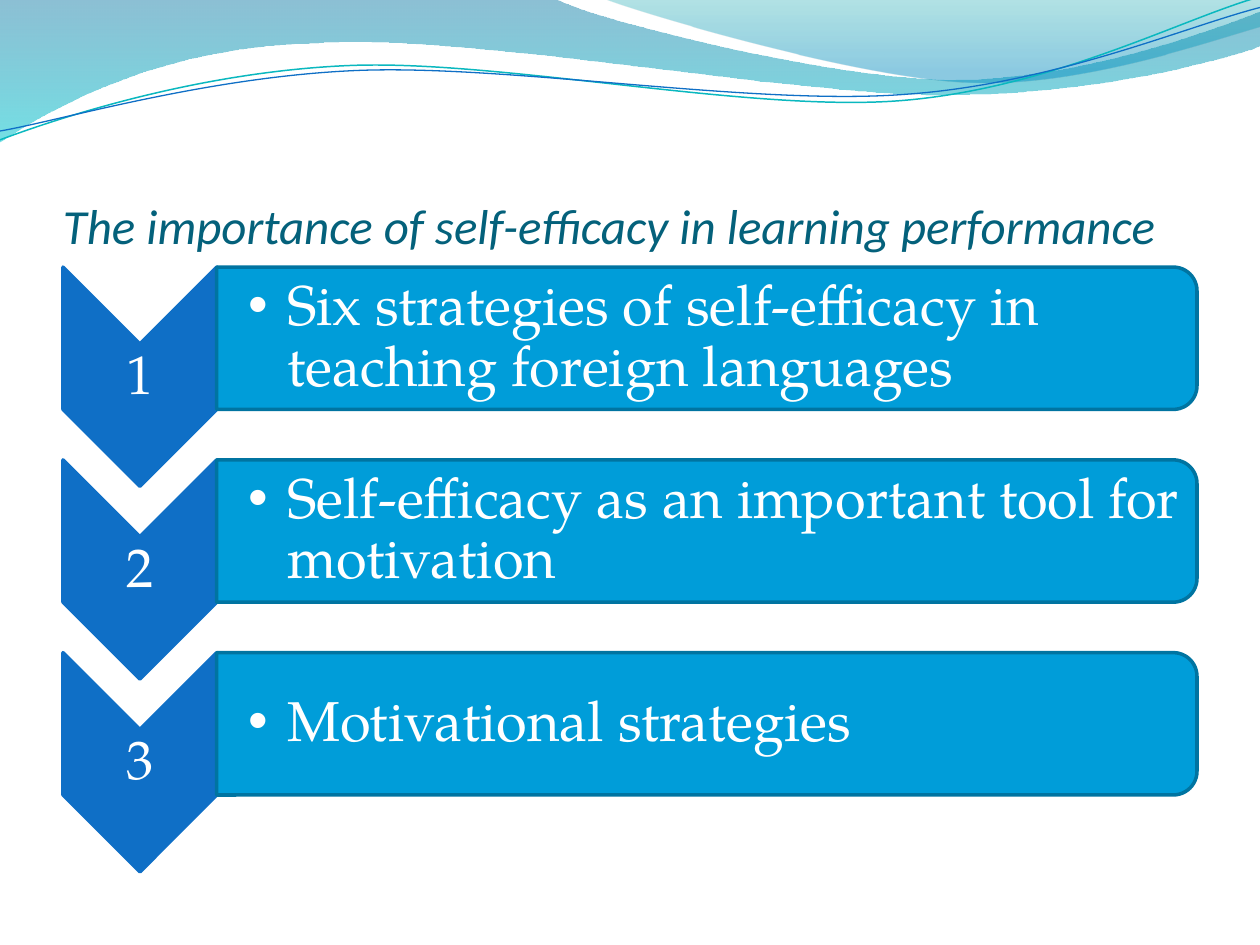
from math import cos, radians, sin

from lxml import etree
from pptx import Presentation
from pptx.dml.color import RGBColor
from pptx.enum.shapes import MSO_SHAPE
from pptx.enum.text import MSO_ANCHOR, PP_ALIGN
from pptx.oxml.ns import qn
from pptx.util import Inches, Pt

CHEVRON, ROUND_TOP = MSO_SHAPE.CHEVRON, MSO_SHAPE.ROUND_2_SAME_RECTANGLE
MIDDLE, BOTTOM = MSO_ANCHOR.MIDDLE, MSO_ANCHOR.BOTTOM
LEFT, CENTER = PP_ALIGN.LEFT, PP_ALIGN.CENTER

COLORS = {"title": "04617B", "chevron": "0F6FC6", "bar": "009DD9",
          "bar_line": "0074A1", "teal": "0AB8BF", "white": "FFFFFF"}
SERIF = "TeX Gyre Pagella"

TITLE = "The importance of self-efficacy in learning performance"
STEPS = ["Six strategies of self-efficacy in teaching foreign languages",
         "Self-efficacy as an important tool for motivation",
         "Motivational strategies"]

# Waves: 2 numbers make a straight segment, 6 a Bezier curve.
# Gradient stops: position %, colour, opacity %
BANDS = [
    ([(0, 0), (4.4, -0.01), (4.76, 0.17, 6.64, 0.63, 7.58, 0.63),
      (8.53, 0.63, 9.58, 0.26, 10, 0.09), (10.01, 0.36),
      (9.83, 0.44, 8.7, 0.76, 7.46, 0.75), (6.22, 0.75, 3.82, 0.28, 2.57, 0.34),
      (1.29, 0.36, 0.46, 0.83, -0.01, 1.13)],
     [(0, "0074A1", 45), (100, "00C6CF", 55)]),
    ([(4.79, -0.01), (5.09, 0.11, 6.82, 0.62, 7.69, 0.65),
      (8.56, 0.69, 9.61, 0.32, 10, 0.21), (10, 0)],
     [(0, "00A1A9", 30), (80, "008BBF", 45)]),
]
# Thin curves: segments, centre, colour, width
TILT = -2.7
CURVES = [
    ([(0, 1.11), (0.48, 0.93, 1.58, 0.57, 2.77, 0.52),
      (3.95, 0.47, 5.93, 0.89, 7.13, 0.8), (8.33, 0.71, 9.38, 0.15, 9.98, -0.02)],
     (4.99, 0.58), "teal", 0.85),
    ([(0, 1.04), (0.47, 0.96, 1.64, 0.61, 2.83, 0.56),
      (4.03, 0.51, 5.97, 0.84, 7.17, 0.75), (8.36, 0.67, 9.41, 0.21, 10, 0.06)],
     (5, 0.59), "chevron", 0.75),
]

# Step layout, in inches
LEFT_EDGE, TOP, PITCH = 0.5, 2.12, 1.53
CHEVRON_W, CHEVRON_H = 1.22, 1.74
BAR_W, BAR_H = 7.78, 1.13
BAR_X = LEFT_EDGE + CHEVRON_W


def rgb(name):
    return RGBColor.from_string(COLORS[name])


def pairs(seg):
    return list(zip(seg[::2], seg[1::2]))


def turn(seg, center, degrees):
    """Segment turned clockwise about the centre."""
    (cx, cy), a = center, radians(degrees)
    return tuple(v for x, y in pairs(seg) for v in (
        cx + (x - cx) * cos(a) - (y - cy) * sin(a),
        cy + (x - cx) * sin(a) + (y - cy) * cos(a)))


def add_wave(slide, segments, close):
    start, *rest = [(Inches(x), Inches(y)) for seg in segments for x, y in pairs(seg)]
    builder = slide.shapes.build_freeform(*start)
    builder.add_line_segments(rest, close=close)
    sp = builder.convert_to_shape()
    # Join each three points of a curve into one Bezier segment
    lines = iter(list(sp._element.iter(qn("a:lnTo"))))
    for seg in segments[1:]:
        first = next(lines)
        if len(seg) == 6:
            first.tag = qn("a:cubicBezTo")
            for extra in (next(lines), next(lines)):
                first.append(extra[0])
                extra.getparent().remove(extra)
    sp.shadow.inherit = False
    sp.fill.background()
    sp.line.fill.background()
    return sp


def set_gradient(sp, stops):
    """Vertical gradient with opacity."""
    old = sp._element.spPr.find(qn("a:noFill"))
    grad = etree.Element(qn("a:gradFill"), rotWithShape="1")
    stop_list = etree.SubElement(grad, qn("a:gsLst"))
    for pos, color, opacity in stops:
        gs = etree.SubElement(stop_list, qn("a:gs"), pos=str(pos * 1000))
        clr = etree.SubElement(gs, qn("a:srgbClr"), val=color)
        etree.SubElement(clr, qn("a:alpha"), val=str(opacity * 1000))
    etree.SubElement(grad, qn("a:lin"), ang="5400000", scaled="0")
    old.getparent().replace(old, grad)


def add_turned(slide, kind, x, y, w, h, fill, line):
    """Preset shape turned 90 degrees that fills the box x, y, w, h."""
    sp = slide.shapes.add_shape(kind, Inches(x + (w - h) / 2), Inches(y + (h - w) / 2),
                                Inches(h), Inches(w))
    sp.rotation = 90
    sp.shadow.inherit = False
    sp.fill.solid()
    sp.fill.fore_color.rgb = rgb(fill)
    sp.line.color.rgb = rgb(line)
    sp.line.width = Pt(2)


def add_text(slide, text, box, insets, size, font, color, anchor, align=LEFT, spacing=1.0):
    tf = slide.shapes.add_textbox(*map(Inches, box)).text_frame
    tf.word_wrap = True
    tf.vertical_anchor = anchor
    tf.margin_left, tf.margin_top, tf.margin_right, tf.margin_bottom = map(Inches, insets)
    p = tf.paragraphs[0]
    p.text = text
    p.alignment = align
    p.line_spacing = spacing
    f = p.runs[0].font
    f.size, f.name, f.color.rgb = Pt(size), font, rgb(color)
    return p


def add_bullet(p, indent):
    p.level = 1
    pPr = p._p.get_or_add_pPr()
    pPr.set("marL", str(Inches(indent)))
    pPr.set("indent", str(-Inches(indent)))
    etree.SubElement(pPr, qn("a:buFont"), typeface="Arial")
    etree.SubElement(pPr, qn("a:buChar"), char="•")


prs = Presentation()
prs.slide_width, prs.slide_height = Inches(10), Inches(7.5)
slide = prs.slides.add_slide(prs.slide_layouts[6])

# Waves along the top
for segments, stops in BANDS:
    set_gradient(add_wave(slide, segments, True), stops)
for segments, center, color, width in CURVES:
    sp = add_wave(slide, [turn(seg, center, -TILT) for seg in segments], False)
    sp.rotation = TILT
    sp.line.color.rgb = rgb(color)
    sp.line.width = Pt(width)

# Title
p = add_text(slide, TITLE, (0.5, 0.77, 9, 1.25), (0, 0.05, 0, 0),
             28, "Calibri", "title", BOTTOM)
p.runs[0].font.italic = True

# Numbered steps
for i, step in enumerate(STEPS):
    y = TOP + i * PITCH
    add_turned(slide, CHEVRON, LEFT_EDGE, y, CHEVRON_W, CHEVRON_H, "chevron", "chevron")
    add_text(slide, str(i + 1), (LEFT_EDGE, y + CHEVRON_W / 2, CHEVRON_W, 0.52),
             [0.02] * 4, 31, SERIF, "white", MIDDLE, CENTER, 0.9)
    add_turned(slide, ROUND_TOP, BAR_X, y, BAR_W, BAR_H, "bar", "bar_line")
    p = add_text(slide, step, (BAR_X, y + 0.05, 7.73, 1.02), (0.25, 0.02, 0.02, 0.02),
                 32, SERIF, "white", MIDDLE, spacing=0.9)
    add_bullet(p, 0.31)

prs.save("out.pptx")
